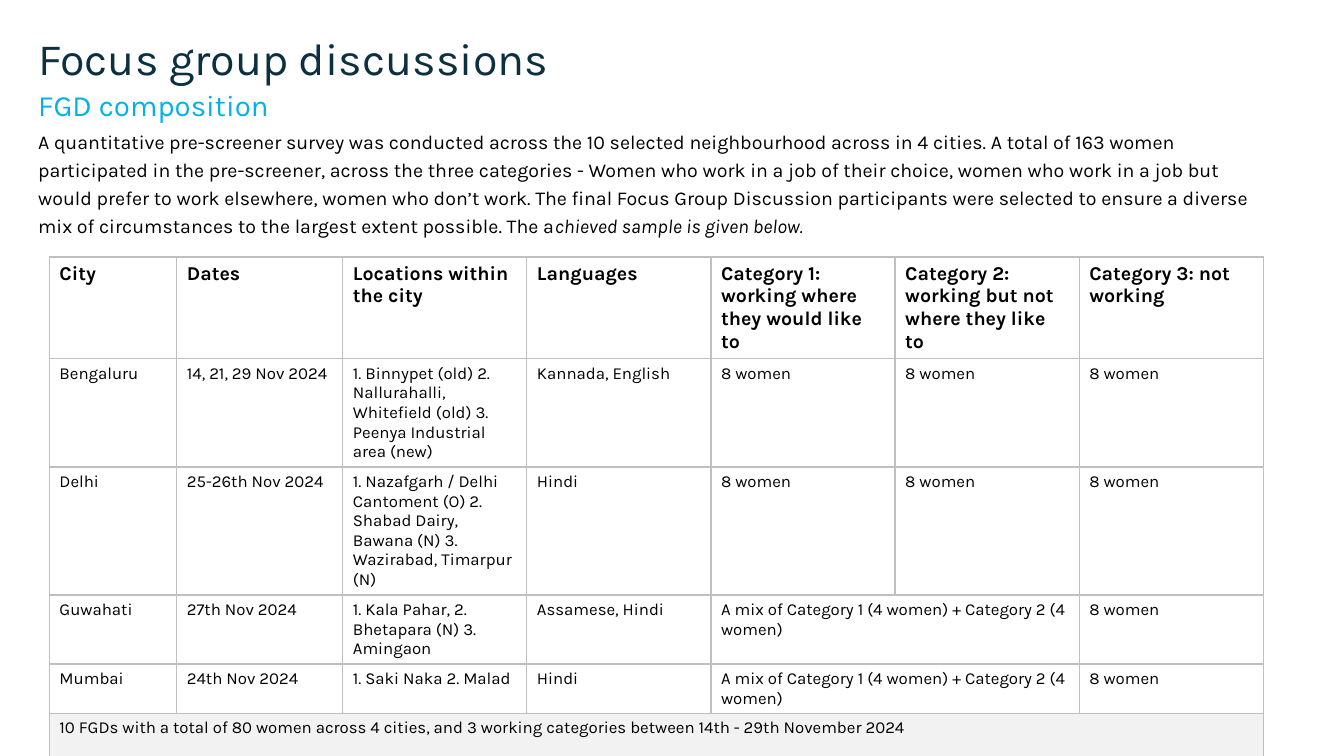
from lxml.etree import SubElement
from pptx import Presentation
from pptx.dml.color import RGBColor
from pptx.enum.text import MSO_ANCHOR, MSO_AUTO_SIZE, PP_ALIGN
from pptx.oxml.ns import qn
from pptx.util import Pt


def style(para, size, color="000000", bold=False):
    font = para.font
    font.name, font.size, font.bold = "Karla", Pt(size), bold
    font.color.rgb = RGBColor.from_string(color)
    para.alignment = PP_ALIGN.LEFT
    para.space_before = Pt(0)


def border(cell, color="BFBFBF"):
    """Draw a thin line on all four sides; call before filling the cell."""
    props = cell._tc.get_or_add_tcPr()
    for side in ("lnL", "lnR", "lnT", "lnB"):
        line = SubElement(props, qn(f"a:{side}"), w=str(Pt(1)))
        fill = SubElement(line, qn("a:solidFill"))
        SubElement(fill, qn("a:srgbClr"), val=color)


deck = Presentation()
deck.slide_width, deck.slide_height = Pt(960), Pt(540)
slide = deck.slides.add_slide(deck.slide_layouts[1])
title, body = slide.placeholders

# Title and introduction
for holder, top, width, height in ((title, 20, 828, 29), (body, 58.3, 882, 117.4)):
    holder.left, holder.top = Pt(20), Pt(top)
    holder.width, holder.height = Pt(width), Pt(height)
    frame = holder.text_frame
    frame.word_wrap = True
    frame.auto_size = MSO_AUTO_SIZE.NONE
    frame.vertical_anchor = MSO_ANCHOR.TOP

title.text_frame.margin_top = Pt(6)
title.text_frame.text = "Focus group discussions"
head = title.text_frame.paragraphs[0]
style(head, 32, "0B3041")
head.line_spacing = 0.9

body.text_frame.text = "FGD composition"
sub = body.text_frame.paragraphs[0]
style(sub, 21, "00B0F0")
intro = body.text_frame.add_paragraph()
style(intro, 14)
intro.line_spacing = 1.2
intro.space_before = Pt(2)
intro.add_run().text = (
    "A quantitative pre-screener survey was conducted across the 10 selected "
    "neighbourhood across in 4 cities. A total of 163 women participated in the "
    "pre-screener, across the three categories - Women who work in a job of their "
    "choice, women who work in a job but would prefer to work elsewhere, women who "
    "don’t work. The final Focus Group Discussion participants were selected to "
    "ensure a diverse mix of circumstances to the largest extent possible. The a"
)
end = intro.add_run()
end.text = "chieved sample is given below."
end.font.italic = True
for para in (sub, intro):
    props = para._p.get_or_add_pPr()
    props.set("marL", "0")
    props.set("indent", "0")
    SubElement(props, qn("a:buNone"))

# Sample table; None continues the merged cell on its left
women = "8 women"
mix = "A mix of Category 1 (4 women) + Category 2 (4 women)"
rows = [
    ["City", "Dates", "Locations within the city", "Languages",
     "Category 1: working where they would like to",
     "Category 2: working but not where they like to",
     "Category 3: not working"],
    ["Bengaluru", "14, 21, 29 Nov 2024",
     "1. Binnypet (old) 2. Nallurahalli, Whitefield (old) 3. Peenya Industrial area (new)",
     "Kannada, English", women, women, women],
    ["Delhi", "25-26th Nov 2024",
     "1. Nazafgarh / Delhi Cantoment (O) 2. Shabad Dairy, Bawana (N) 3. Wazirabad, Timarpur (N)",
     "Hindi", women, women, women],
    ["Guwahati", "27th Nov 2024", "1. Kala Pahar, 2. Bhetapara (N) 3. Amingaon",
     "Assamese, Hindi", mix, None, women],
    ["Mumbai", "24th Nov 2024", "1. Saki Naka 2. Malad", "Hindi", mix, None, women],
    ["10 FGDs with a total of 80 women across 4 cities, and 3 working categories "
     "between 14th - 29th November 2024"] + [None] * 6,
]
widths = [91, 118.6] + [131.5] * 5
heights = [72, 76.3, 76.3, 48.2, 34.6, 36.7]
table = slide.shapes.add_table(
    len(rows), len(widths), Pt(35.3), Pt(183.6), Pt(sum(widths)), Pt(sum(heights))
).table
table.first_row = table.horz_banding = False
for col, width in zip(table.columns, widths):
    col.width = Pt(width)
for row, height in zip(table.rows, heights):
    row.height = Pt(height)

last = len(rows) - 1
for r, texts in enumerate(rows):
    for c, text in enumerate(texts):
        cell = table.cell(r, c)
        border(cell)
        cell.fill.solid()
        shade = "F2F2F2" if r == last else "FFFFFF"
        cell.fill.fore_color.rgb = RGBColor.from_string(shade)
        if text:
            cell.text = text
        style(cell.text_frame.paragraphs[0], 12 if r else 14, bold=r == 0)
for r, start, stop in ((3, 4, 5), (4, 4, 5), (last, 0, 6)):
    table.cell(r, start).merge(table.cell(r, stop))

deck.save("out.pptx")
